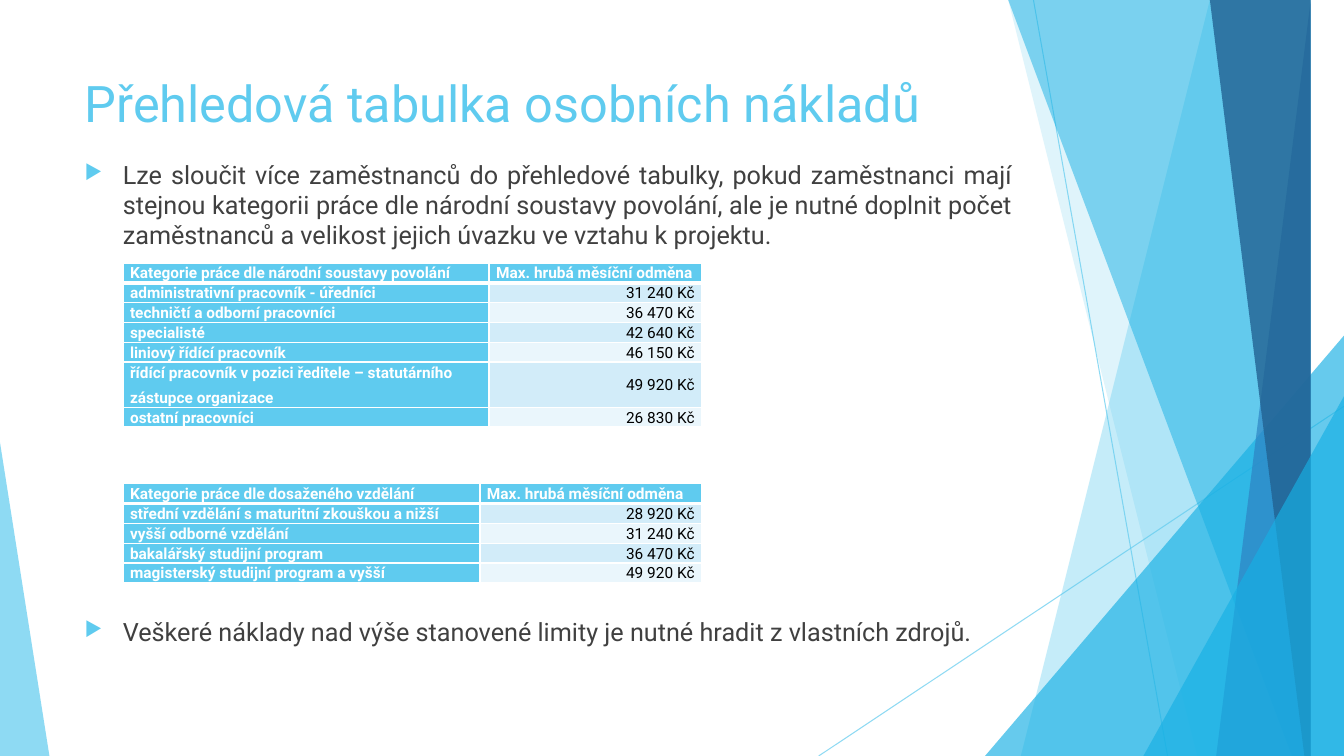
from lxml.etree import SubElement
from pptx import Presentation
from pptx.dml.color import RGBColor
from pptx.enum.shapes import MSO_CONNECTOR as CONN, MSO_SHAPE as SHAPE
from pptx.enum.text import MSO_ANCHOR as ANCHOR, PP_ALIGN as ALIGN
from pptx.oxml import parse_xml
from pptx.oxml.ns import nsdecls, qn
from pptx.util import Inches, Pt

SKY = RGBColor(0x5F, 0xCB, 0xEF)
CYAN = RGBColor(0x17, 0xB0, 0xE4)
BLUE = RGBColor(0x2E, 0x83, 0xC3)
NAVY = RGBColor(0x22, 0x62, 0x92)
GREY = RGBColor(0x40, 0x40, 0x40)
WHITE = RGBColor(0xFF, 0xFF, 0xFF)
BLACK = RGBColor(0, 0, 0)
BANDS = RGBColor(0xD2, 0xEC, 0xF9), RGBColor(0xEA, 0xF6, 0xFC)
W, H = 13.33, 7.5
LEFT, TEXT_W = 0.74, 9.4
ROW_H, TALL_ROW_H = 0.19, 0.44


def write(tf, text, size, color, bold=False, align=ALIGN.LEFT, spacing=None, after=0):
    """Fill a text frame, one paragraph per line of text."""
    for i, line in enumerate(text.split("\n")):
        p = tf.add_paragraph() if i else tf.paragraphs[0]
        p.alignment, p.line_spacing, p.space_after = align, spacing, Pt(after)
        r = p.add_run()
        r.text = line
        r.font.name, r.font.size, r.font.bold = "Roboto", Pt(size), bold
        r.font.color.rgb = color


def tint(fmt, color, alpha):
    """Give a fill a solid colour with an opacity in percent."""
    fmt.solid()
    fmt.fore_color.rgb = color
    clr = fmt._xPr.find(qn("a:solidFill"))[0]
    SubElement(clr, qn("a:alpha"), val=str(alpha * 1000))


prs = Presentation()
prs.slide_width, prs.slide_height = Inches(W), Inches(H)
s = prs.slides.add_slide(prs.slide_layouts[5])

# Background lines
for x1, y1, x2 in [(10.25, 0, 11.58), (W, 4.03, 8.12)]:
    line = s.shapes.add_connector(CONN.STRAIGHT, Inches(x1), Inches(y1), Inches(x2), Inches(H))
    line.line.width = Pt(0.75)
    tint(line.line.fill, SKY, 70)
    SubElement(line._element.spPr, qn("a:effectLst"))

# Background facets: wedges run from (top x, bottom x) to the right edge,
# triangles have (left, top, width, apex)
facets = [
    ((12.28, 10.04), SKY, 36),
    ((10.5, 11.83), SKY, 20),
    ((9.77, 3.33, 3.56, 1), CYAN, 66),
    ((10.21, 12.91), CYAN, 50),
    ((13.03, 11.92), BLUE, 70),
    ((11.96, 13.18), NAVY, 80),
    ((11.34, 3.93, 1.99, 1), CYAN, 66),
    ((0, 4.39, 0.49, 0), SKY, 70),
]
for geometry, color, alpha in facets:
    if len(geometry) == 2:
        top_x, bottom_x = geometry
        outline = s.shapes.build_freeform(top_x, 0, scale=Inches(1))
        outline.add_line_segments([(W, 0), (W, H), (bottom_x, H)], close=True)
        sp = outline.convert_to_shape()
    else:
        left, top, width, apex = geometry
        sp = s.shapes.add_shape(SHAPE.ISOSCELES_TRIANGLE, Inches(left), Inches(top),
                                Inches(width), Inches(H - top))
        sp.adjustments[0] = apex
    tint(sp.fill, color, alpha)
    sp.line.fill.background()
    sp.shadow.inherit = False

# Title
title = s.shapes.title
title.left, title.top, title.width, title.height = map(Inches, (LEFT, 0.67, TEXT_W, 1.44))
title.text_frame.vertical_anchor = ANCHOR.TOP
write(title.text_frame, "Přehledová tabulka osobních nákladů", 36, SKY)

# Bulleted text, leaving room for the tables between the two paragraphs
body = s.shapes.add_textbox(Inches(LEFT), Inches(1.53), Inches(TEXT_W), Inches(5.08))
tf = body.text_frame
tf.word_wrap = True
write(tf, "Lze sloučit více zaměstnanců do přehledové tabulky, pokud zaměstnanci mají stejnou "
      "kategorii práce dle národní soustavy povolání, ale je nutné doplnit počet zaměstnanců "
      "a velikost jejich úvazku ve vztahu k projektu.\n"
      "Veškeré náklady nad výše stanovené limity je nutné hradit z vlastních zdrojů.",
      18, GREY, align=ALIGN.JUSTIFY)
tf.paragraphs[1].space_before = Pt(262)
for p in tf.paragraphs:
    pPr = p._p.get_or_add_pPr()
    pPr.set("marL", str(Inches(0.38)))
    pPr.set("indent", str(-Inches(0.38)))
    SubElement(SubElement(pPr, qn("a:buClr")), qn("a:srgbClr"), val=str(SKY))
    SubElement(pPr, qn("a:buSzPct"), val="80000")
    SubElement(pPr, qn("a:buChar"), char="▶")

# Tables
tables = [
    (2.61, (3.63, 2.11), [
        ("Kategorie práce dle národní soustavy povolání", "Max. hrubá měsíční odměna"),
        ("administrativní pracovník - úředníci", "31 240 Kč"),
        ("techničtí a odborní pracovníci", "36 470 Kč"),
        ("specialisté", "42 640 Kč"),
        ("liniový řídící pracovník", "46 150 Kč"),
        ("řídící pracovník v pozici ředitele – statutárního\nzástupce organizace", "49 920 Kč"),
        ("ostatní pracovníci", "26 830 Kč"),
    ]),
    (4.8, (3.54, 2.2), [
        ("Kategorie práce dle dosaženého vzdělání", "Max. hrubá měsíční odměna"),
        ("střední vzdělání s maturitní zkouškou a nižší", "28 920 Kč"),
        ("vyšší odborné vzdělání", "31 240 Kč"),
        ("bakalářský studijní program", "36 470 Kč"),
        ("magisterský studijní program a vyšší", "49 920 Kč"),
    ]),
]
for top, widths, rows in tables:
    heights = [TALL_ROW_H if "\n" in label else ROW_H for label, _ in rows]
    table = s.shapes.add_table(len(rows), 2, Inches(1.22), Inches(top),
                               Inches(sum(widths)), Inches(sum(heights))).table
    for column, width in zip(table.columns, widths):
        column.width = Inches(width)
    for i, (row, height) in enumerate(zip(rows, heights)):
        table.rows[i].height = Inches(height)
        for j, text in enumerate(row):
            cell = table.cell(i, j)
            is_value = i > 0 and j == 1
            cell.vertical_anchor = ANCHOR.MIDDLE
            cell.margin_left = cell.margin_right = Inches(0.07)
            cell.margin_top = cell.margin_bottom = 0
            cell.fill.solid()
            cell.fill.fore_color.rgb = BANDS[(i - 1) % 2] if is_value else SKY
            write(cell.text_frame, text, 11, BLACK if is_value else WHITE, bold=not is_value,
                  align=ALIGN.RIGHT if is_value else ALIGN.LEFT, spacing=1.07, after=4)
            for k, side in enumerate("LRTB"):
                thick = (i, side) in [(0, "B"), (1, "T")]
                cell._tc.get_or_add_tcPr().insert(k, parse_xml(
                    f'<a:ln{side} {nsdecls("a")} w="{Pt(3 if thick else 1)}">'
                    f'<a:solidFill><a:srgbClr val="{WHITE}"/></a:solidFill></a:ln{side}>'))

prs.save("out.pptx")
